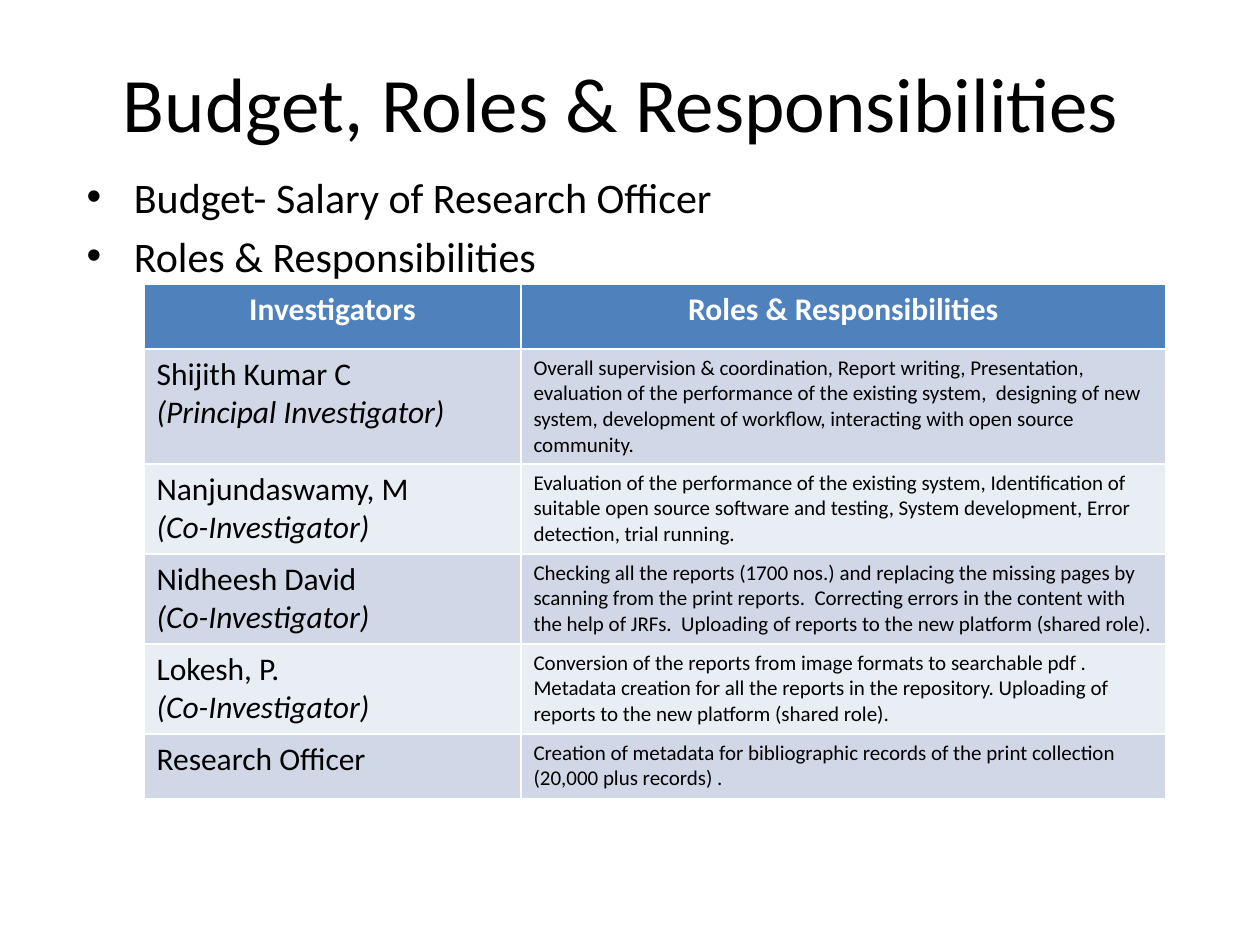
from pptx import Presentation
from pptx.dml.color import RGBColor
from pptx.enum.text import MSO_ANCHOR, MSO_AUTO_SIZE, PP_ALIGN
from pptx.util import Pt

CENTER, LEFT = PP_ALIGN.CENTER, PP_ALIGN.LEFT
MIDDLE = MSO_ANCHOR.MIDDLE
NO_AUTOFIT = MSO_AUTO_SIZE.NONE
PX = 914400 // 126

THEME = {
    "font": "Calibri",
    "text": RGBColor.from_string("000000"),
    "header_text": RGBColor.from_string("FFFFFF"),
    "header_fill": RGBColor.from_string("4F81BD"),
    "bands": [RGBColor.from_string("D0D8E8"), RGBColor.from_string("E9EDF4")],
    "title_size": Pt(44),
    "bullet_size": Pt(24),
    "name_size": Pt(18),
    "role_size": Pt(12),
}

BULLETS = ["Budget- Salary of Research Officer", "Roles & Responsibilities"]
HEADERS = ["Investigators", "Roles & Responsibilities"]
INVESTIGATORS = [
    ("Shijith Kumar C", "(Principal Investigator)",
     "Overall supervision & coordination, Report writing, Presentation, evaluation of "
     "the performance of the existing system,  designing of new system, development of "
     "workflow, interacting with open source  community."),
    ("Nanjundaswamy, M", "(Co-Investigator)",
     "Evaluation of the performance of the existing system, Identification of suitable "
     "open source software and testing, System development, Error detection, trial running."),
    ("Nidheesh David", "(Co-Investigator)",
     "Checking all the reports (1700 nos.) and replacing the missing pages by scanning "
     "from the print reports.  Correcting errors in the content with the help of JRFs.  "
     "Uploading of reports to the new platform (shared role)."),
    ("Lokesh, P.", "(Co-Investigator)",
     "Conversion of the reports from image formats to searchable pdf . Metadata creation "
     "for all the reports in the repository. Uploading of reports to the new platform "
     "(shared role)."),
    ("Research Officer", None,
     "Creation of metadata for bibliographic records of the print collection "
     "(20,000 plus records) ."),
]
COLUMN_WIDTHS = [377, 645]
ROW_HEIGHTS = [65, 113, 90, 90, 90, 65]


def place(shape, left, top, width, height):
    shape.left, shape.top = left * PX, top * PX
    shape.width, shape.height = width * PX, height * PX


def write_line(frame, text, size, color=THEME["text"], align=LEFT, bold=False, italic=False):
    """Fill the frame's first paragraph, or add one when it already has text."""
    paragraph = frame.add_paragraph() if frame.text else frame.paragraphs[0]
    paragraph.alignment = align
    run = paragraph.add_run()
    run.text = text
    font = run.font
    font.name, font.size = THEME["font"], size
    font.bold, font.italic = bold, italic
    font.color.rgb = color


presentation = Presentation()
presentation.slide_width = 1260 * PX
presentation.slide_height = 945 * PX
slide = presentation.slides.add_slide(presentation.slide_layouts[1])

title, body = slide.placeholders
place(title, 63, 38, 1134, 127)
title.text_frame.vertical_anchor = MIDDLE
title.text_frame.auto_size = NO_AUTOFIT
write_line(title.text_frame, "Budget, Roles & Responsibilities ", THEME["title_size"], align=CENTER)

place(body, 74, 165, 1134, 624)
body.text_frame.auto_size = NO_AUTOFIT
for bullet in BULLETS:
    write_line(body.text_frame, bullet, THEME["bullet_size"])

table = slide.shapes.add_table(
    len(ROW_HEIGHTS), len(COLUMN_WIDTHS), 144 * PX, 284 * PX,
    sum(COLUMN_WIDTHS) * PX, sum(ROW_HEIGHTS) * PX).table
for column, width in zip(table.columns, COLUMN_WIDTHS):
    column.width = width * PX
for index, (row, height) in enumerate(zip(table.rows, ROW_HEIGHTS)):
    row.height = height * PX
    for cell in row.cells:
        cell.fill.solid()
        cell.fill.fore_color.rgb = THEME["bands"][(index - 1) % 2] if index else THEME["header_fill"]

for cell, header in zip(table.rows[0].cells, HEADERS):
    write_line(cell.text_frame, header, THEME["name_size"], THEME["header_text"], CENTER, bold=True)

for index, (name, position, duties) in enumerate(INVESTIGATORS, start=1):
    name_frame = table.cell(index, 0).text_frame
    write_line(name_frame, name, THEME["name_size"])
    if position:
        write_line(name_frame, position, THEME["name_size"], italic=True)
    write_line(table.cell(index, 1).text_frame, duties, THEME["role_size"])

presentation.save("out.pptx")
